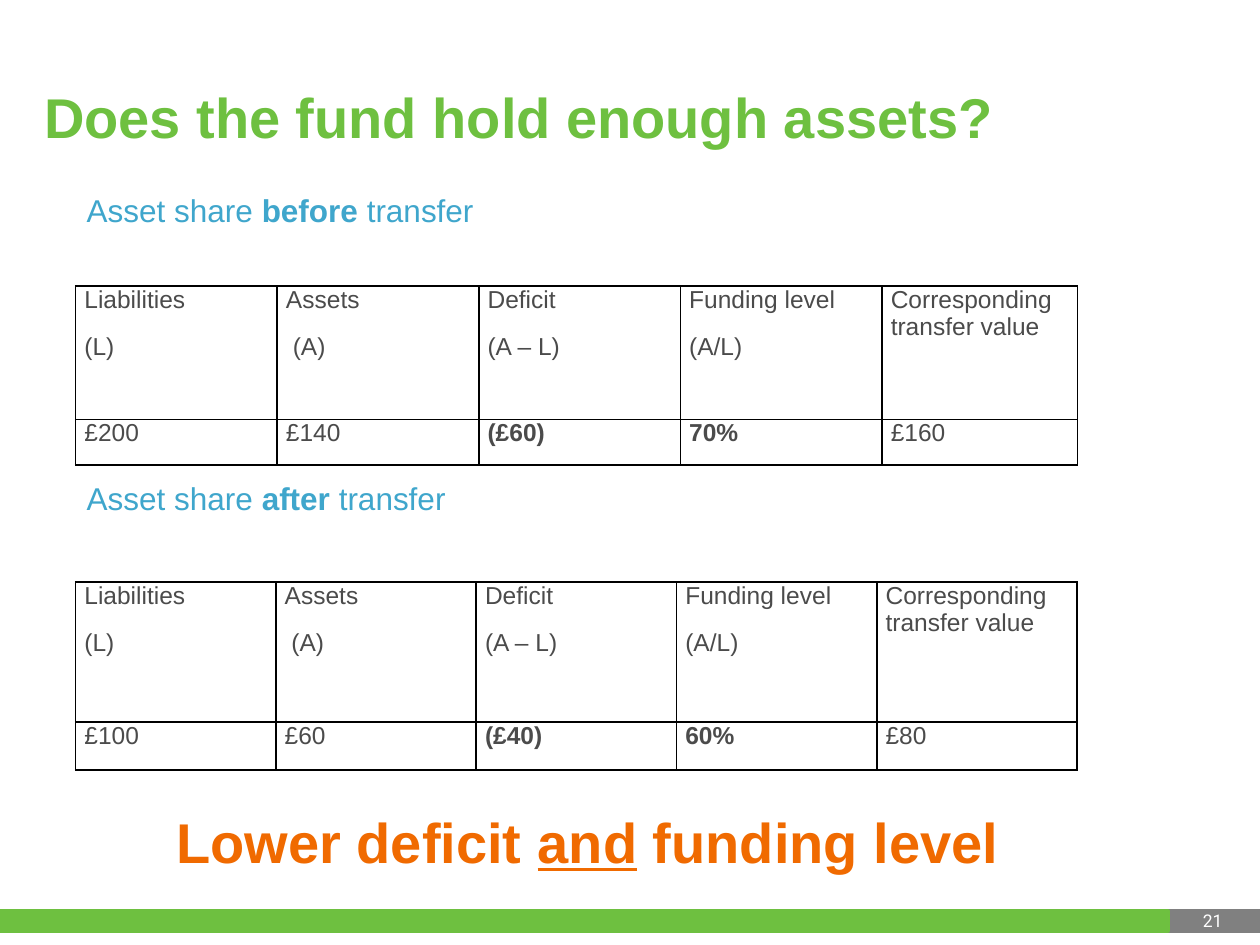
from lxml.etree import SubElement
from pptx import Presentation
from pptx.dml.color import RGBColor
from pptx.enum.shapes import MSO_SHAPE
from pptx.enum.text import MSO_ANCHOR, PP_ALIGN
from pptx.oxml.ns import qn
from pptx.util import Inches, Pt

COLORS = {"green": "6EC040", "grey": "808080", "blue": "3FA6CC",
          "orange": "F06A00", "text": "4B4B4B", "white": "FFFFFF",
          "black": "000000"}
HEADS = ["Liabilities\n(L)", "Assets\n (A)", "Deficit\n(A – L)",
         "Funding level\n(A/L)", "Corresponding transfer value"]
# word, heading top, table top, column width, row heights, values
SHARES = [
    ("before", 1.47, 2.27, 1.6, (1.06, 0.36),
     ["£200", "£140", "(£60)", "70%", "£160"]),
    ("after", 3.75, 4.62, 1.59, (1.11, 0.38),
     ["£100", "£60", "(£40)", "60%", "£80"]),
]
WIDTH = 7.95


def style(para, size, color, bold=False, name="Arial"):
    font = para.font
    font.name, font.size, font.bold = name, Pt(size), bold
    font.color.rgb = RGBColor.from_string(COLORS[color])


def border(cell):
    """Draw a thin black line on all four sides of the cell."""
    props = cell._tc.get_or_add_tcPr()
    for i, side in enumerate(("a:lnL", "a:lnR", "a:lnT", "a:lnB")):
        line = props.makeelement(qn(side), {"w": str(Pt(1))})
        fill = SubElement(line, qn("a:solidFill"))
        SubElement(fill, qn("a:srgbClr"), val=COLORS["black"])
        props.insert(i, line)


deck = Presentation()
deck.slide_width, deck.slide_height = Inches(10), Inches(7.5)
slide = deck.slides.add_slide(deck.slide_layouts[5])
shapes = slide.shapes

# Footer
for left, width, color in ((9.17, 0.83, "grey"), (0, 9.27, "green")):
    bar = shapes.add_shape(MSO_SHAPE.RECTANGLE, Inches(left), Inches(7.23),
                           Inches(width), Inches(0.16))
    bar.shadow.inherit = False
    bar.fill.solid()
    bar.fill.fore_color.rgb = RGBColor.from_string(COLORS[color])
    bar.line.color.rgb = RGBColor.from_string(COLORS[color])
    bar.line.width = Pt(2)

page = shapes.add_textbox(Inches(9.16), Inches(6.85),
                          Inches(0.64), Inches(0.59)).text_frame
page.word_wrap = True
page.vertical_anchor = MSO_ANCHOR.BOTTOM
page.text = "21"
page.paragraphs[0].alignment = PP_ALIGN.RIGHT
style(page.paragraphs[0], 10, "white", name="Roboto")

# Title
title = shapes.title
title.left, title.top = Inches(0.25), Inches(0.3)
title.width, title.height = Inches(9), Inches(1.25)
title.text_frame.text = "Does the fund hold enough assets?"
title.text_frame.vertical_anchor = MSO_ANCHOR.MIDDLE
para = title.text_frame.paragraphs[0]
para.alignment = PP_ALIGN.LEFT
style(para, 32, "green", True)

# Headings and tables
for word, top, start, col, heights, values in SHARES:
    box = shapes.add_textbox(Inches(0.59), Inches(top),
                             Inches(3.5), Inches(0.77))
    box.text_frame.word_wrap = False
    para = box.text_frame.paragraphs[0]
    para.alignment = PP_ALIGN.LEFT
    style(para, 18, "blue")
    for text in ("Asset share ", word + " ", "transfer"):
        run = para.add_run()
        run.text = text
        run.font.bold = text.strip() == word

    table = shapes.add_table(2, 5, Inches(0.6), Inches(start), Inches(WIDTH),
                             Inches(sum(heights))).table
    table.first_row = table.horz_banding = False
    for i in range(5):
        table.columns[i].width = Inches(col if i < 4 else WIDTH - 4 * col)
    for r, cells in enumerate((HEADS, values)):
        table.rows[r].height = Inches(heights[r])
        for c, text in enumerate(cells):
            cell = table.cell(r, c)
            cell.fill.background()
            border(cell)
            cell.margin_left = cell.margin_right = Inches(0.07)
            cell.margin_top = cell.margin_bottom = 0
            cell.text = text
            for i, para in enumerate(cell.text_frame.paragraphs):
                para.space_before = Pt(1 if i else 0)
                para.space_after = Pt(10)
                style(para, 14, "text", r == 1 and c in (2, 3))

# Conclusion
box = shapes.add_textbox(Inches(0.59), Inches(6.36),
                         Inches(8.27), Inches(0.64))
box.text_frame.word_wrap = True
para = box.text_frame.paragraphs[0]
para.alignment = PP_ALIGN.CENTER
style(para, 32, "orange", True)
for text in ("Lower deficit ", "and", " funding level "):
    run = para.add_run()
    run.text = text
    run.font.underline = text == "and"

deck.save("out.pptx")
